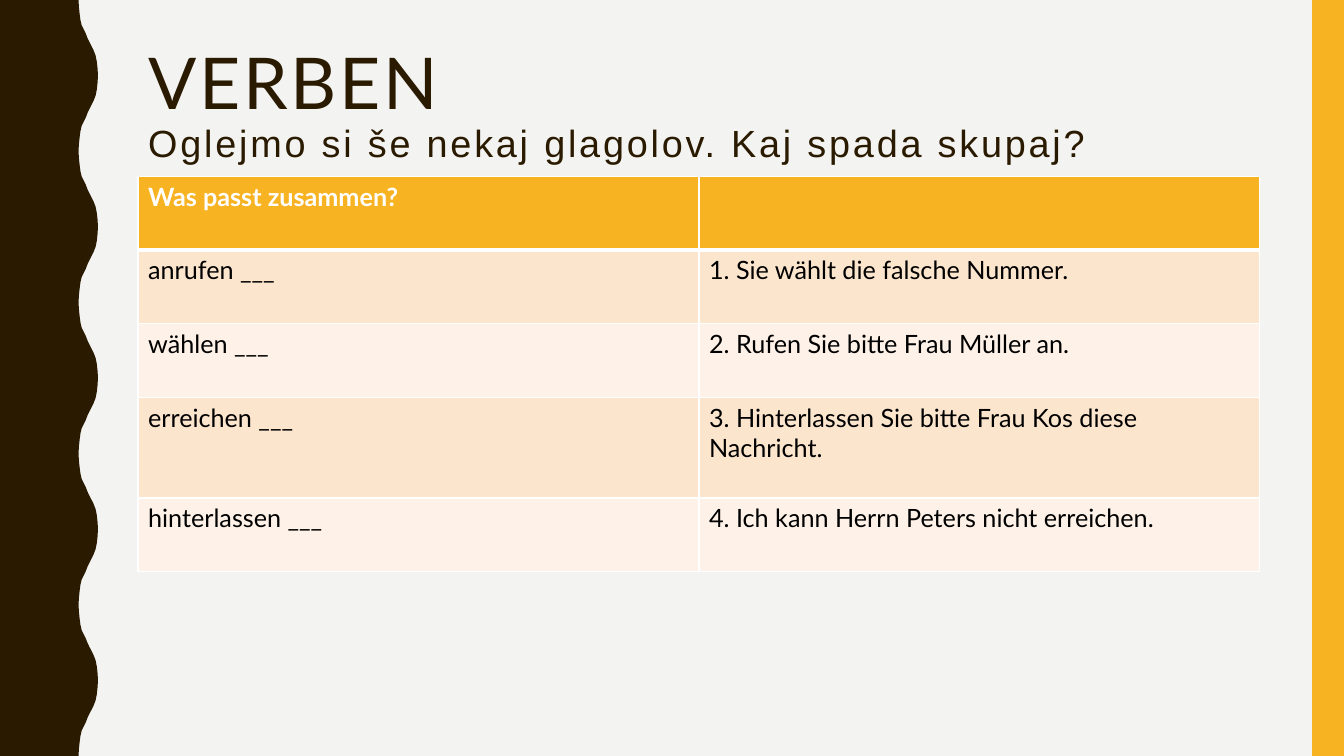
from dataclasses import dataclass
from itertools import product

from lxml import etree
from pptx import Presentation
from pptx import util as u
from pptx.dml.color import RGBColor
from pptx.enum import shapes, text
from pptx.oxml import ns


@dataclass(frozen=True)
class Theme:
    background: str = "F3F3F2"
    dark: str = "2A1A00"
    accent: str = "F8B323"
    odd_row: str = "FCE5CD"
    even_row: str = "FEF2E8"
    white: str = "FFFFFF"
    black: str = "000000"
    heading_font: str = "Lato"
    subtitle_font: str = "Arial"
    heading_size: float = 51
    subtitle_size: float = 27
    table_size: float = 18
    letter_spacing: int = 200
    thin_rule: float = 1
    header_rule: float = 3


@dataclass(frozen=True)
class TableRow:
    verb: str
    sentence: str
    height: float = 1.86


THEME = Theme()
SLIDE_WIDTH, SLIDE_HEIGHT = 33.87, 19.05
CONTENT_LEFT, CONTENT_WIDTH = 3.48, 28.27
TABLE_TOP = 4.44
STRIPE_WIDTH = 0.8
WAVE_PERIOD = 3.81
WAVE_COUNT = 5
HALF_WAVE = [
    (1.98, 0), (1.99, 0.18), (2.01, 0.36), (2.03, 0.51), (2.06, 0.64),
    (2.11, 0.74), (2.16, 0.84), (2.21, 0.97), (2.26, 1.07), (2.31, 1.17),
    (2.36, 1.27), (2.41, 1.4), (2.44, 1.55), (2.46, 1.73), (2.47, 1.9),
]
ROWS = [
    TableRow("Was passt zusammen?", ""),
    TableRow("anrufen ___", "1. Sie wählt die falsche Nummer."),
    TableRow("wählen ___", "2. Rufen Sie bitte Frau Müller an."),
    TableRow("erreichen ___", "3. Hinterlassen Sie bitte Frau Kos diese Nachricht.", 2.53),
    TableRow("hinterlassen ___", "4. Ich kann Herrn Peters nicht erreichen."),
]


def rgb(color: str) -> RGBColor:
    return RGBColor.from_string(color)


def paint(shape, color: str) -> None:
    shape.shadow.inherit = False
    shape.fill.solid()
    shape.fill.fore_color.rgb = rgb(color)
    shape.line.fill.background()


def style_font(font, name: str, size: float, color: str, bold: bool = False) -> None:
    font.name = name
    font.size = u.Pt(size)
    font.bold = bold
    font.color.rgb = rgb(color)


def draw_wave(slide) -> None:
    one_wave = HALF_WAVE + [(x, WAVE_PERIOD - y) for x, y in HALF_WAVE[-2:0:-1]]
    edge = [
        (x, wave * WAVE_PERIOD + y)
        for wave, (x, y) in product(range(WAVE_COUNT), one_wave)
    ]
    corners = [(HALF_WAVE[0][0], SLIDE_HEIGHT), (0, SLIDE_HEIGHT)]
    outline = [(u.Cm(x), u.Cm(y)) for x, y in edge + corners]
    builder = slide.shapes.build_freeform(0, 0)
    builder.add_line_segments(outline, close=True)
    paint(builder.convert_to_shape(), THEME.dark)


def draw_stripe(slide) -> None:
    stripe = slide.shapes.add_shape(
        shapes.MSO_SHAPE.RECTANGLE, u.Cm(SLIDE_WIDTH - STRIPE_WIDTH), 0,
        u.Cm(STRIPE_WIDTH), u.Cm(SLIDE_HEIGHT))
    paint(stripe, THEME.accent)


def add_heading_run(paragraph, wording: str, font_name: str, size: float) -> None:
    run = paragraph.add_run()
    run.text = wording
    style_font(run.font, font_name, size, THEME.dark)
    run.font._element.set("spc", str(THEME.letter_spacing))


def write_title(slide) -> None:
    title = slide.shapes.title
    title.left, title.top = u.Cm(CONTENT_LEFT), u.Cm(1.07)
    title.width, title.height = u.Cm(CONTENT_WIDTH), u.Cm(4.14)
    frame = title.text_frame
    frame.word_wrap = True
    frame.auto_size = text.MSO_AUTO_SIZE.NONE
    frame.vertical_anchor = text.MSO_ANCHOR.TOP
    heading = frame.paragraphs[0]
    heading.alignment = text.PP_ALIGN.LEFT
    heading.line_spacing = 0.9
    add_heading_run(heading, "VERBEN", THEME.heading_font, THEME.heading_size)
    heading.add_line_break()
    add_heading_run(heading, "Oglejmo si še nekaj glagolov. Kaj spada skupaj?",
                    THEME.subtitle_font, THEME.subtitle_size)


def add_border(cell, side: str, width: float) -> None:
    properties = cell._tc.get_or_add_tcPr()
    line = etree.SubElement(properties, ns.qn(f"a:ln{side}"), w=str(u.Pt(width)))
    fill = etree.SubElement(line, ns.qn("a:solidFill"))
    etree.SubElement(fill, ns.qn("a:srgbClr"), val=THEME.white)


def format_cell(cell, wording: str, row_index: int) -> None:
    is_header = row_index == 0
    thick_side = {0: "B", 1: "T"}.get(row_index)
    for side in "LRTB":
        add_border(cell, side, THEME.header_rule if side == thick_side else THEME.thin_rule)
    banding = THEME.odd_row if row_index % 2 else THEME.even_row
    cell.fill.solid()
    cell.fill.fore_color.rgb = rgb(THEME.accent if is_header else banding)
    cell.text = wording
    style_font(cell.text_frame.paragraphs[0].font, THEME.heading_font, THEME.table_size,
               THEME.white if is_header else THEME.black, is_header)


def draw_verb_table(slide) -> None:
    verbs = slide.shapes.add_table(
        len(ROWS), 2, u.Cm(CONTENT_LEFT), u.Cm(TABLE_TOP), u.Cm(CONTENT_WIDTH),
        u.Cm(sum(row.height for row in ROWS))).table
    for row_index, row in enumerate(ROWS):
        verbs.rows[row_index].height = u.Cm(row.height)
        for column_index, wording in enumerate((row.verb, row.sentence)):
            format_cell(verbs.cell(row_index, column_index), wording, row_index)


def main() -> None:
    deck = Presentation()
    deck.slide_width, deck.slide_height = u.Cm(SLIDE_WIDTH), u.Cm(SLIDE_HEIGHT)
    slide = deck.slides.add_slide(deck.slide_layouts[5])
    slide.background.fill.solid()
    slide.background.fill.fore_color.rgb = rgb(THEME.background)
    draw_wave(slide)
    draw_stripe(slide)
    write_title(slide)
    draw_verb_table(slide)
    deck.save("out.pptx")


if __name__ == "__main__":
    main()
